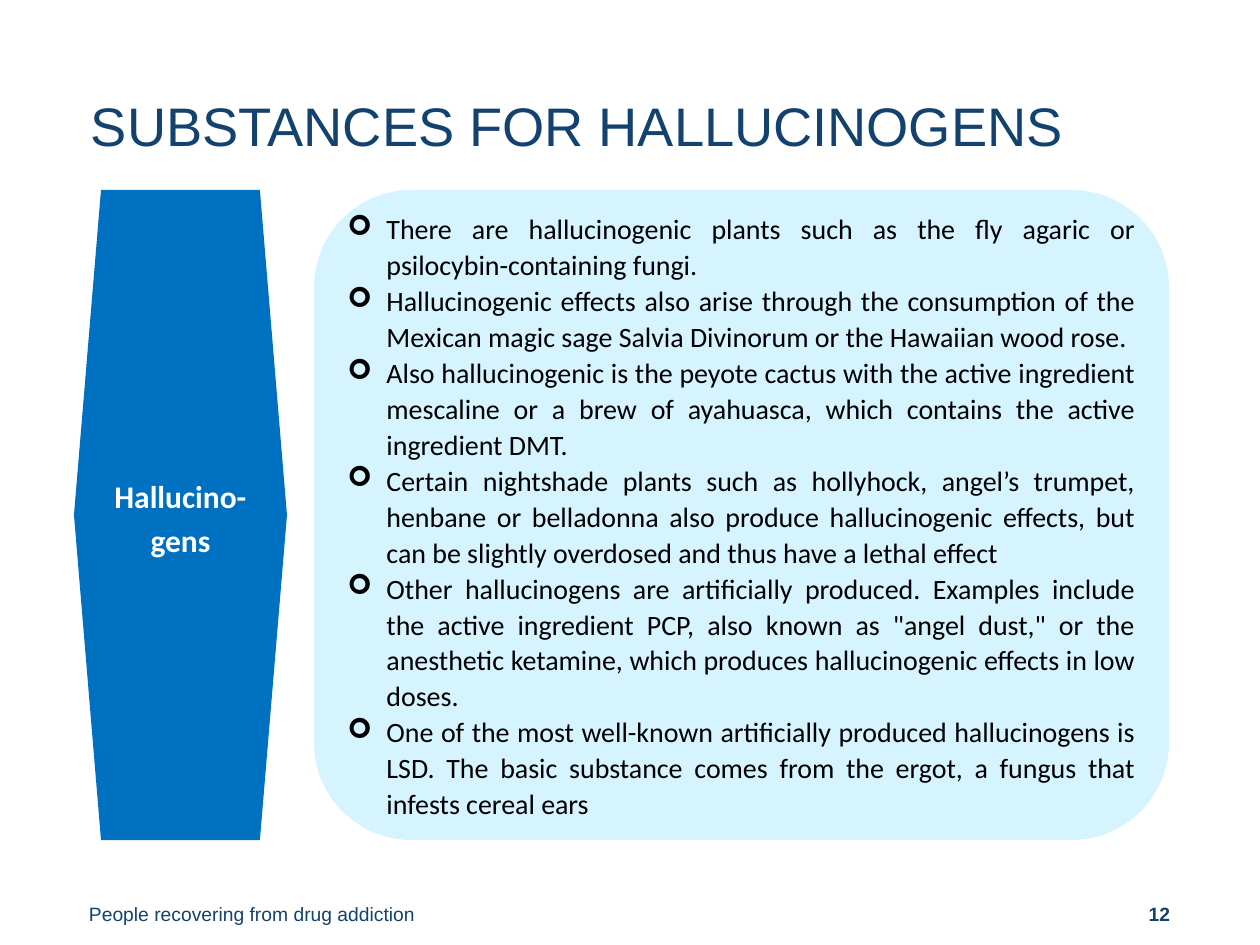
from lxml import etree
from pptx import Presentation
from pptx import util as u
from pptx.dml.color import RGBColor
from pptx.enum import shapes, text
from pptx.oxml.ns import qn

NAVY = RGBColor(0x13, 0x42, 0x6F)
BLUE = RGBColor(0x00, 0x70, 0xC0)
PALE = RGBColor(0xD5, 0xF4, 0xFF)
WHITE = RGBColor(0xFF, 0xFF, 0xFF)
BLACK = RGBColor(0x00, 0x00, 0x00)

LEFT, CENTER = text.PP_ALIGN.LEFT, text.PP_ALIGN.CENTER
RIGHT, JUSTIFY = text.PP_ALIGN.RIGHT, text.PP_ALIGN.JUSTIFY
TOP, MIDDLE, BOTTOM = (text.MSO_ANCHOR.TOP, text.MSO_ANCHOR.MIDDLE,
                       text.MSO_ANCHOR.BOTTOM)
INDENT = 39

FACTS = [
    "There are hallucinogenic plants such as the fly agaric or "
    "psilocybin-containing fungi.",
    "Hallucinogenic effects also arise through the consumption of the "
    "Mexican magic sage Salvia Divinorum or the Hawaiian wood rose.",
    "Also hallucinogenic is the peyote cactus with the active ingredient "
    "mescaline or a brew of ayahuasca, which contains the active "
    "ingredient DMT.",
    "Certain nightshade plants such as hollyhock, angel’s trumpet, henbane "
    "or belladonna also produce hallucinogenic effects, but can be slightly "
    "overdosed and thus have a lethal effect",
    "Other hallucinogens are artificially produced. Examples include the "
    "active ingredient PCP, also known as \"angel dust,\" or the anesthetic "
    "ketamine, which produces hallucinogenic effects in low doses.",
    "One of the most well-known artificially produced hallucinogens is LSD. "
    "The basic substance comes from the ergot, a fungus that infests cereal "
    "ears",
]


def px(n):
    return u.Emu(round(n * 914400 / 126))


class Deck:
    def __init__(self, wide, high):
        self.prs = Presentation()
        self.prs.slide_width, self.prs.slide_height = px(wide), px(high)
        self.slide = self.prs.slides.add_slide(self.prs.slide_layouts[6])

    def fill_text(self, shape, lines, size, color, font="Arial", bold=False,
                  align=LEFT, anchor=TOP, pads=(13, 6, 13, 6), space=1.0,
                  bullet=None):
        frame = shape.text_frame
        frame.word_wrap = True
        frame.vertical_anchor = anchor
        (frame.margin_left, frame.margin_top,
         frame.margin_right, frame.margin_bottom) = map(px, pads)
        for i, line in enumerate(lines):
            para = frame.add_paragraph() if i else frame.paragraphs[0]
            para.text = line
            para.alignment = align
            para.line_spacing = space
            if bullet:
                self.mark(para, bullet)
            para.font.name, para.font.size = font, u.Pt(size)
            para.font.bold, para.font.color.rgb = bold, color

    def mark(self, para, sign):
        props = para._p.get_or_add_pPr()
        props.set("marL", str(px(INDENT)))
        props.set("indent", str(-px(INDENT)))
        etree.SubElement(props, qn("a:buFont"), typeface="Wingdings")
        etree.SubElement(props, qn("a:buChar"), char=sign)

    def label(self, box, line, size, **style):
        shape = self.slide.shapes.add_textbox(*map(px, box))
        self.fill_text(shape, [line], size, NAVY, **style)

    def panel(self, kind, box, fill, adjust, lines, size, color, **style):
        shape = self.slide.shapes.add_shape(kind, *map(px, box))
        shape.shadow.inherit = False
        shape.fill.solid()
        shape.fill.fore_color.rgb = fill
        shape.line.fill.background()
        for i, value in enumerate(adjust):
            shape.adjustments[i] = value
        self.fill_text(shape, lines, size, color, font="Calibri",
                       anchor=MIDDLE, **style)


def main():
    deck = Deck(1260, 945)
    kinds = shapes.MSO_SHAPE

    # Footer and page number
    foot = dict(anchor=BOTTOM, space=u.Pt(13.3))
    deck.label((0, 868, 426, 76), "People recovering from drug addiction", 11,
               pads=(89, 6, 0, 20), **foot)
    deck.label((975, 868, 284, 76), "12", 11, bold=True, align=RIGHT,
               pads=(0, 6, 89, 20), **foot)

    # Title
    deck.label((91, 92, 1077, 113), "SUBSTANCES FOR HALLUCINOGENS", 31,
               pads=(0, 6, 13, 6), space=u.Pt(34))

    # Category and its facts
    deck.panel(kinds.HEXAGON, (74, 190, 213, 650), BLUE, (0.127, 1.155),
               ["Hallucino-gens"], 18, WHITE, bold=True, align=CENTER,
               space=1.15)
    deck.panel(kinds.ROUNDED_RECTANGLE, (314, 190, 855, 650), PALE, (0.15,),
               FACTS, 16, BLACK, align=JUSTIFY, pads=(5, 5, 5, 5),
               space=1.07, bullet="➢")

    deck.prs.save("out.pptx")


if __name__ == "__main__":
    main()
